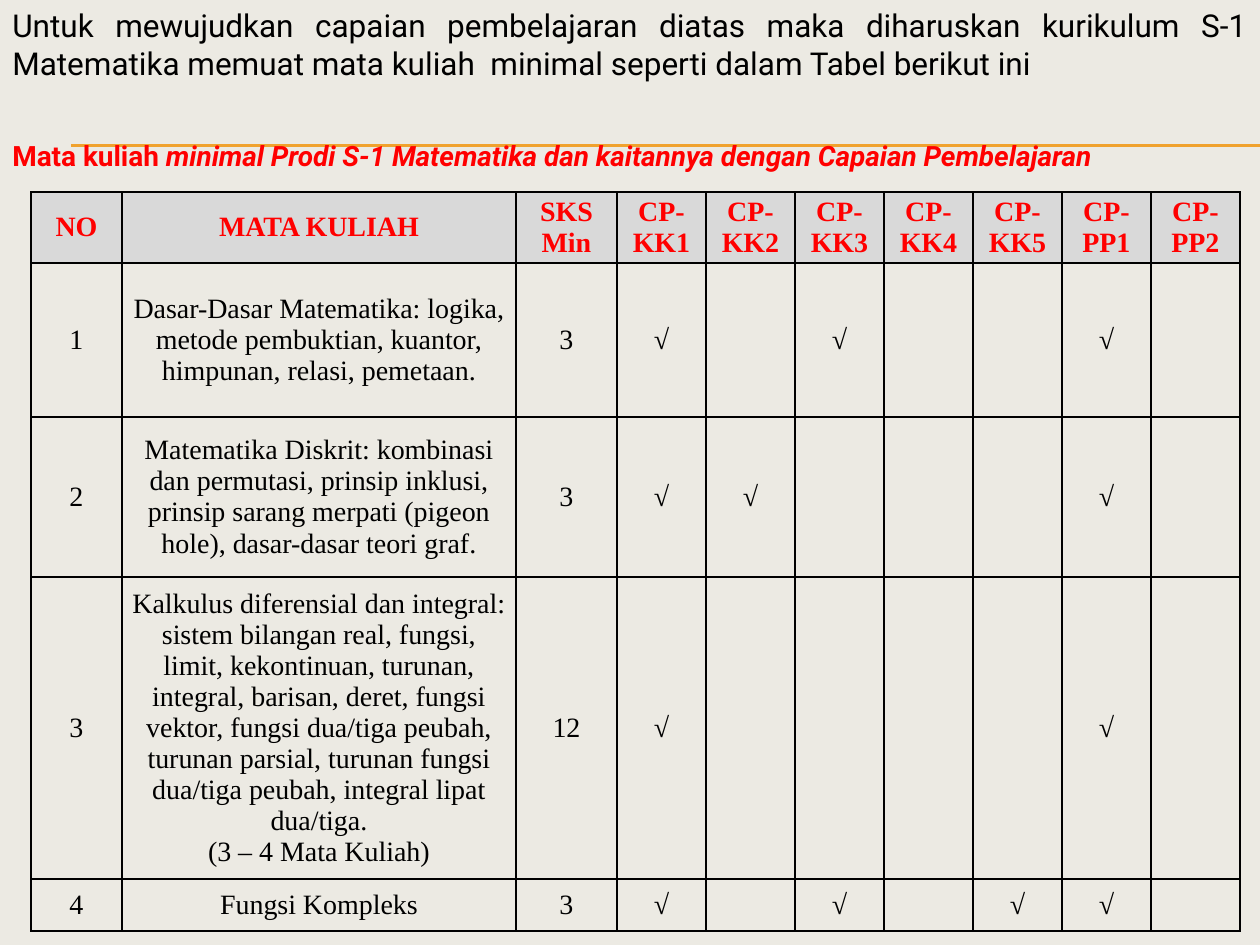
"""Build the slide that maps minimum mathematics courses to learning outcomes."""
from lxml.etree import SubElement
from pptx import Presentation
from pptx.dml.color import RGBColor
from pptx.enum.text import MSO_ANCHOR, PP_ALIGN
from pptx.oxml.ns import qn
from pptx.util import Pt

PX = 914400 / 126
BEIGE = RGBColor(0xEC, 0xEA, 0xE3)
GOLD = RGBColor(0xF0, 0xA2, 0x2E)
RED = RGBColor(0xFF, 0x00, 0x00)
BLACK = RGBColor(0x00, 0x00, 0x00)
GREY = RGBColor(0xD9, 0xD9, 0xD9)
SANS, SERIF = "Roboto", "Times New Roman"

INTRO = ("Untuk mewujudkan capaian pembelajaran diatas maka diharuskan kurikulum S-1 "
         "Matematika memuat mata kuliah  minimal seperti dalam Tabel berikut ini")
CAPTION = ("Mata kuliah",
           " minimal Prodi S-1 Matematika dan kaitannya dengan Capaian Pembelajaran")
OUTCOMES = ["CP-KK1", "CP-KK2", "CP-KK3", "CP-KK4", "CP-KK5", "CP-PP1", "CP-PP2"]
HEADER = ["NO", "MATA KULIAH", "SKS Min"] + OUTCOMES
COURSES = [
    ("Dasar-Dasar Matematika: logika, metode pembuktian, kuantor, himpunan, relasi, "
     "pemetaan.", 3, {"CP-KK1", "CP-KK3", "CP-PP1"}),
    ("Matematika Diskrit: kombinasi dan permutasi, prinsip inklusi, prinsip sarang "
     "merpati (pigeon hole), dasar-dasar teori graf.", 3, {"CP-KK1", "CP-KK2", "CP-PP1"}),
    ("Kalkulus diferensial dan integral: sistem bilangan real, fungsi, limit, "
     "kekontinuan, turunan, integral, barisan, deret, fungsi vektor, fungsi dua/tiga "
     "peubah, turunan parsial, turunan fungsi dua/tiga peubah, integral lipat dua/tiga.\n"
     "(3 – 4 Mata Kuliah)", 12, {"CP-KK1", "CP-PP1"}),
    ("Fungsi Kompleks", 3, {"CP-KK1", "CP-KK3", "CP-KK5", "CP-PP1"}),
]
COL_WIDTHS = [91, 394, 101] + [89] * len(OUTCOMES)
ROW_HEIGHTS = [71, 154, 160, 302, 52]
RULE_YS = [145, 146]


def px(n):
    return round(n * PX)


def add_text(p, text, font=SERIF, size=16, color=BLACK, bold=False, italic=False,
             align=PP_ALIGN.CENTER):
    p.alignment = align
    r = p.add_run()
    r.text = text
    f = r.font
    f.name, f.size, f.bold, f.italic = font, Pt(size), bold, italic
    f.color.rgb = color


def add_box(s, x, y, w, h):
    tf = s.shapes.add_textbox(px(x), px(y), px(w), px(h)).text_frame
    tf.word_wrap = True
    return tf.paragraphs[0]


def add_rule(s, y):
    line = s.shapes.add_connector(1, px(71), px(y), px(1260), px(y))
    line.line.color.rgb = GOLD
    line.line.width = Pt(0.75)
    SubElement(line._element.spPr, qn("a:effectLst"))


def add_borders(cell):
    tc_pr = cell._tc.get_or_add_tcPr()
    for side in ("a:lnL", "a:lnR", "a:lnT", "a:lnB"):
        ln = SubElement(tc_pr, qn(side), w=str(Pt(1)))
        fill = SubElement(ln, qn("a:solidFill"))
        SubElement(fill, qn("a:srgbClr"), val=str(BLACK))


def format_cell(cell, text, header):
    cell.vertical_anchor = MSO_ANCHOR.MIDDLE
    cell.margin_left = cell.margin_right = px(8)
    cell.margin_top = cell.margin_bottom = 0
    add_borders(cell)
    if header:
        cell.fill.solid()
        cell.fill.fore_color.rgb = GREY
    else:
        cell.fill.background()
    tf = cell.text_frame
    for i, part in enumerate(text.split("\n") if text else []):
        p = tf.add_paragraph() if i else tf.paragraphs[0]
        add_text(p, part, color=RED if header else BLACK, bold=header)


def add_course_table(s):
    rows = [HEADER] + [
        [str(no), name, str(credits)] + ["√" if o in met else "" for o in OUTCOMES]
        for no, (name, credits, met) in enumerate(COURSES, 1)]
    table = s.shapes.add_table(len(rows), len(HEADER), px(31), px(192),
                               px(sum(COL_WIDTHS)), px(sum(ROW_HEIGHTS))).table
    table.horz_banding = table.first_row = False
    for col, w in zip(table.columns, COL_WIDTHS):
        col.width = px(w)
    for i, (row, h) in enumerate(zip(table.rows, ROW_HEIGHTS)):
        row.height = px(h)
        for cell, text in zip(row.cells, rows[i]):
            format_cell(cell, text, header=i == 0)


def main():
    prs = Presentation()
    prs.slide_width, prs.slide_height = px(1260), px(945)
    s = prs.slides.add_slide(prs.slide_layouts[6])
    s.background.fill.solid()
    s.background.fill.fore_color.rgb = BEIGE
    for y in RULE_YS:
        add_rule(s, y)
    add_text(add_box(s, 0, 0, 1260, 89), INTRO, font=SANS, size=18, align=PP_ALIGN.JUSTIFY)
    add_course_table(s)
    p = add_box(s, 0, 132, 1260, 47)
    for text, italic in zip(CAPTION, (False, True)):
        add_text(p, text, font=SANS, color=RED, bold=True, italic=italic,
                 align=PP_ALIGN.JUSTIFY)
    prs.save("out.pptx")


if __name__ == "__main__":
    main()
